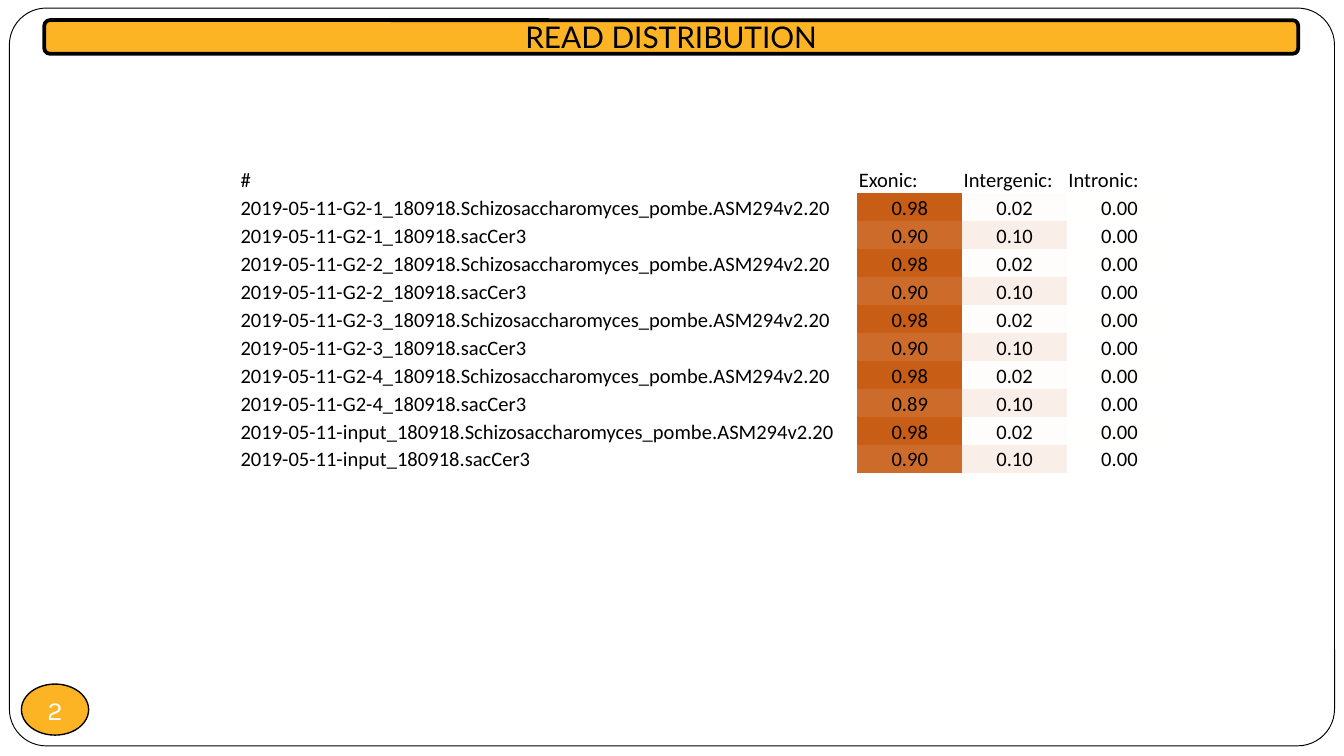
from pptx import Presentation
from pptx import util as u
from pptx.dml.color import RGBColor
from pptx.enum import shapes, text
from pptx.oxml.ns import qn

INK = {
    "black": "000000", "white": "FFFFFF", "gold": "FCB424",
    "rust": "C85D16", "clay": "CC6B2A", "snow": "FFFDFC",
    "blush": "FAEFE8", "pale": "FFFFFE",
}
ALIGN = text.PP_ALIGN
ANCHOR = text.MSO_ANCHOR
KIND = shapes.MSO_SHAPE

deck = Presentation()
deck.slide_width = u.Inches(10)
deck.slide_height = u.Inches(5.625)
slide = deck.slides.add_slide(deck.slide_layouts[6])
unit = deck.slide_width // 100  # the grid has 100 columns, with square cells


def write(frame, words, font="Calibri", size=11, ink="black", align=ALIGN.LEFT):
    para = frame.paragraphs[0]
    para.alignment = align
    run = para.add_run()
    run.text = words
    run.font.name = font
    run.font.size = u.Pt(size)
    run.font.color.rgb = RGBColor.from_string(INK[ink])


def draw(kind, place, fill, width):
    """Add an outlined shape; place is left, top, width and height in grid cells."""
    shape = slide.shapes.add_shape(kind, *(int(n * unit) for n in place))
    shape.shadow.inherit = False
    shape.fill.solid()
    shape.fill.fore_color.rgb = RGBColor.from_string(INK[fill])
    shape.line.color.rgb = RGBColor.from_string(INK["black"])
    shape.line.width = u.Pt(width)
    shape.text_frame.vertical_anchor = ANCHOR.MIDDLE
    return shape


# Frame, page number and title bar
frame = draw(KIND.ROUNDED_RECTANGLE, (0.7, 0.6, 98.6, 54.9), "white", 0.5)
frame.adjustments[0] = 0.05

badge = draw(KIND.OVAL, (1.6, 50.9, 5, 3.8), "gold", 0.75).text_frame
badge.margin_left = badge.margin_right = badge.margin_top = badge.margin_bottom = 0
badge.word_wrap = False
write(badge, "2", font="Karla", size=14, ink="white", align=ALIGN.CENTER)

bar = draw(KIND.ROUNDED_RECTANGLE, (3.3, 1.5, 93.3, 2.5), "gold", 2)
write(bar.text_frame, "READ DISTRIBUTION", font="Lato", size=16, align=ALIGN.CENTER)

# Two genomes per sample; each genome has its own shades
genomes = {
    "Schizosaccharomyces_pombe.ASM294v2.20": (
        ("0.98", "0.02", "0.00"), ("rust", "snow", "pale")),
    "sacCer3": (("0.90", "0.10", "0.00"), ("clay", "blush", "white")),
}
rows = [(("#", "Exonic:", "Intergenic:", "Intronic:"), (None,) * 4)]
for sample in ("G2-1", "G2-2", "G2-3", "G2-4", "input"):
    for genome, (shares, shades) in genomes.items():
        if (sample, genome) == ("G2-4", "sacCer3"):
            shares = ("0.89", *shares[1:])
        name = f"2019-05-11-{sample}_180918.{genome}"
        rows.append(((name, *shares), (None, *shades)))

widths = (46, 7.8, 7.8, 7.8)
place = (17.8, 12.3, sum(widths), 22.9)
grid = slide.shapes.add_table(
    len(rows), len(widths), *(int(n * unit) for n in place)).table
grid.first_row = grid.horz_banding = False
style = grid._tbl.tblPr.find(qn("a:tableStyleId"))
style.text = "{2D5ABB26-0587-4C30-8999-92F81FD0307C}"  # no style, no grid

for col, width in zip(grid.columns, widths):
    col.width = int(width * unit)

for r, (words, fills) in enumerate(rows):
    for c, (word, fill) in enumerate(zip(words, fills)):
        cell = grid.cell(r, c)
        cell.vertical_anchor = ANCHOR.BOTTOM
        cell.margin_left = cell.margin_right = cell.margin_top = u.Inches(0.01)
        cell.margin_bottom = 0
        if fill:
            cell.fill.solid()
            cell.fill.fore_color.rgb = RGBColor.from_string(INK[fill])
        else:
            cell.fill.background()
        write(cell.text_frame, word, align=ALIGN.CENTER if fill else ALIGN.LEFT)

deck.save("out.pptx")
